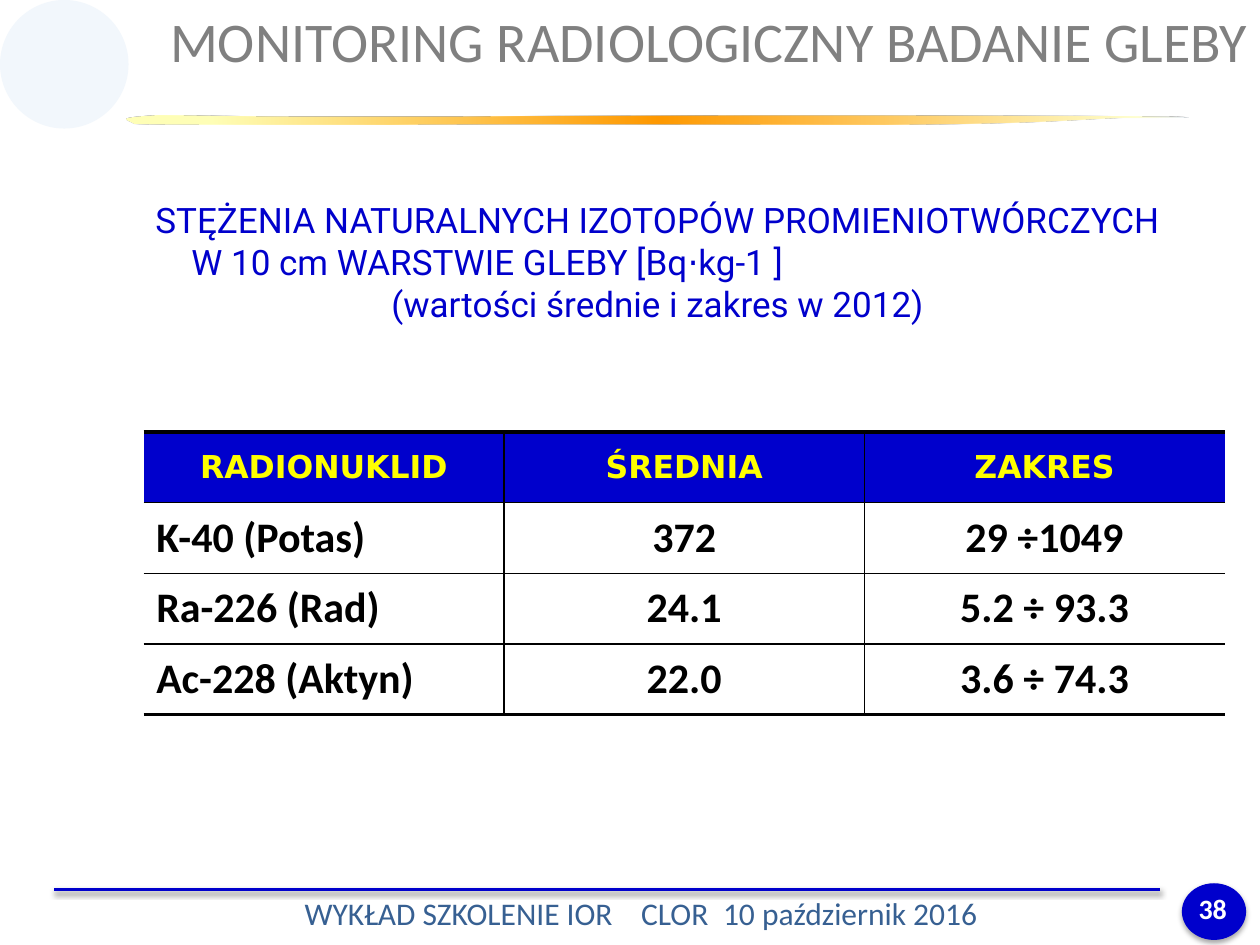
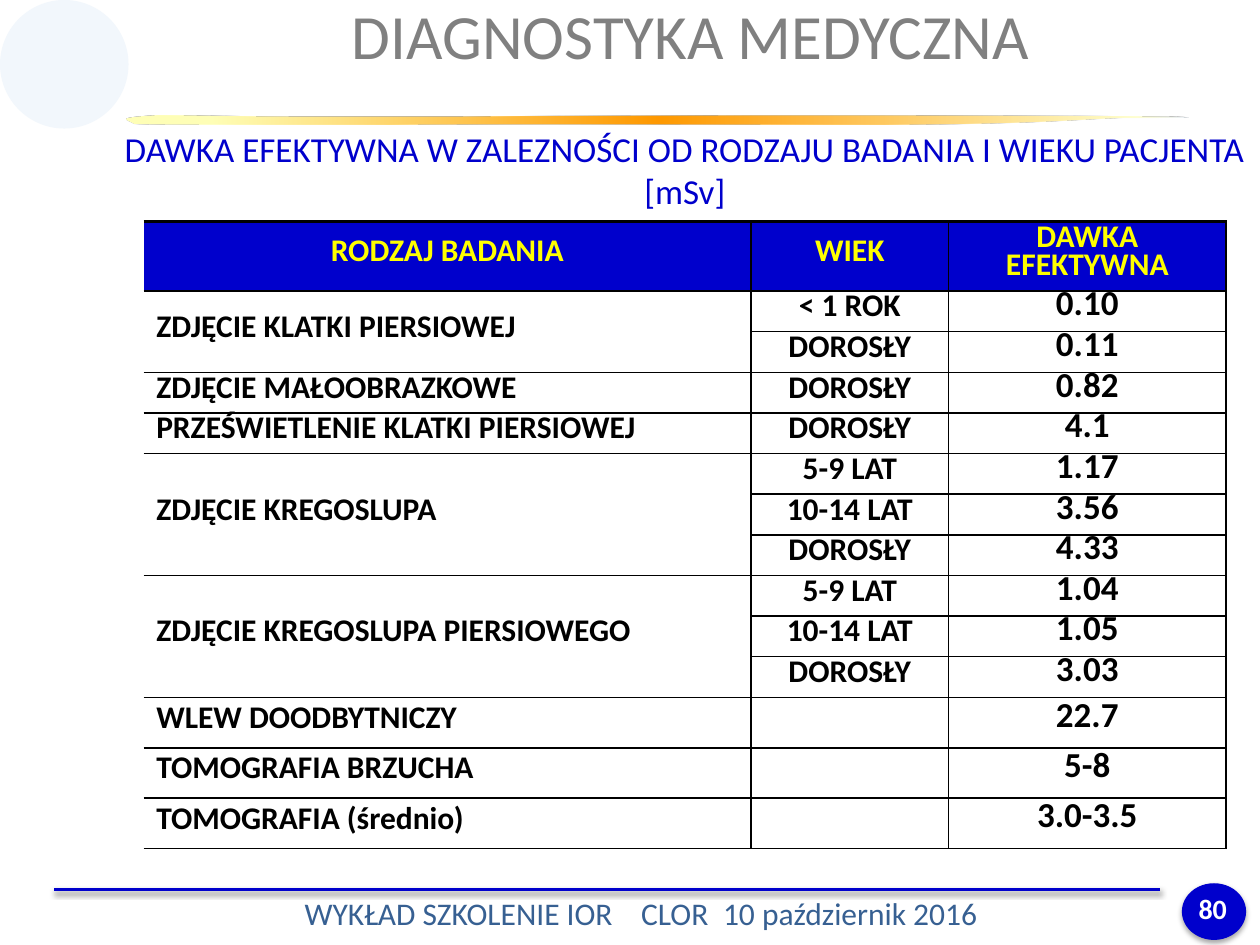
from pptx import Presentation
from pptx.dml.color import RGBColor
from pptx.enum.shapes import MSO_CONNECTOR, MSO_SHAPE
from pptx.enum.text import MSO_ANCHOR, PP_ALIGN
from pptx.oxml import parse_xml
from pptx.oxml.ns import nsdecls, qn
from pptx.util import Inches, Pt

OVAL, ROUNDED = MSO_SHAPE.OVAL, MSO_SHAPE.ROUNDED_RECTANGLE
STRAIGHT = MSO_CONNECTOR.STRAIGHT
LEFT, CENTER = PP_ALIGN.LEFT, PP_ALIGN.CENTER
MIDDLE, TOP = MSO_ANCHOR.MIDDLE, MSO_ANCHOR.TOP

BLUE, YELLOW, BLACK, WHITE = "0000CC", "FFFF00", "000000", "FFFFFF"
TITLE_GRAY, FOOTER_BLUE, DISC_BLUE = "808080", "376092", "F2F7FC"
BODY_FONT = "Calibri"
PLAIN_TABLE = "{2D5ABB26-0587-4C30-8999-92F81FD0307C}"
THIN, THICK = 1, 2.25

# Each stop: position in percent, colour, opacity in percent
SWOOSH_STOPS = [(8, "FFFFB7", 100), (50, "FF9900", 100),
                (95, "FFFFC9", 97), (100, "E1E8F5", 100)]

# Bezier segments: two control points and an end point
SWOOSH_START = (8.91, 0.94)
SWOOSH_CURVES = [
    ((9.29, 0.94), (9.63, 0.94), (9.3, 0.93)),
    ((7.97, 0.92), (5, 0.92), (3.65, 0.93)),
    ((3.2, 0.93), (2.8, 0.93), (2.33, 0.93)),
    ((1.95, 0.93), (1.44, 0.92), (1.25, 0.92)),
    ((0.89, 0.94), (1.01, 0.95), (1.06, 0.98)),
    ((0.99, 0.99), (2.09, 0.99), (3.09, 0.99)),
    ((4.08, 0.98), (6.22, 0.99), (7.02, 0.99)),
    ((8.35, 0.98), (8.54, 0.95), (8.91, 0.94)),
]

SOIL_ROWS = [
    ("RADIONUKLID", "ŚREDNIA", "ZAKRES"),
    ("K-40 (Potas)", "372", "29 ÷1049"),
    ("Ra-226 (Rad)", "24.1", "5.2 ÷ 93.3"),
    ("Ac-228 (Aktyn)", "22.0", "3.6 ÷ 74.3"),
]
# None continues the cell above
DOSE_ROWS = [
    ("RODZAJ BADANIA", "WIEK", "DAWKA EFEKTYWNA"),
    ("ZDJĘCIE KLATKI PIERSIOWEJ", "< 1 ROK", "0.10"),
    (None, "DOROSŁY", "0.11"),
    ("ZDJĘCIE MAŁOOBRAZKOWE", "DOROSŁY", "0.82"),
    ("PRZEŚWIETLENIE KLATKI PIERSIOWEJ", "DOROSŁY", "4.1"),
    ("ZDJĘCIE KREGOSLUPA", "5-9 LAT", "1.17"),
    (None, "10-14 LAT", "3.56"),
    (None, "DOROSŁY", "4.33"),
    ("ZDJĘCIE KREGOSLUPA PIERSIOWEGO", "5-9 LAT", "1.04"),
    (None, "10-14 LAT", "1.05"),
    (None, "DOROSŁY", "3.03"),
    ("WLEW DOODBYTNICZY", "", "22.7"),
    ("TOMOGRAFIA BRZUCHA", "", "5-8"),
    ("TOMOGRAFIA (średnio)", "", "3.0-3.5"),
]


def rgb(color):
    return RGBColor.from_string(color)


def inches(values):
    return [Inches(value) for value in values]


def drawing_xml(tag, attributes, inner=""):
    return parse_xml(f"<a:{tag} {nsdecls('a')} {attributes}>{inner}</a:{tag}>")


def color_xml(color, opacity=100):
    return (f'<a:srgbClr val="{color}"><a:alpha val="{opacity * 1000}"/>'
            "</a:srgbClr>")


def write(frame, lines, size=18, font=BODY_FONT, color=BLACK, bold=False,
          align=LEFT, exact=None):
    """Fill a text frame, one paragraph a line; exact is line pitch in points."""
    for index, line in enumerate(lines):
        para = frame.paragraphs[0] if index == 0 else frame.add_paragraph()
        para.alignment = align
        if exact:
            para.line_spacing = Pt(exact)
        span = para.add_run()
        span.text = line
        span.font.size, span.font.name = Pt(size), font
        span.font.bold = bold
        span.font.color.rgb = rgb(color)


def add_text(page, box, lines, rounded=False, **style):
    if rounded:
        shape = add_plain_shape(page, ROUNDED, box)
    else:
        shape = page.shapes.add_textbox(*inches(box))
    frame = shape.text_frame
    frame.word_wrap = True
    frame.vertical_anchor = TOP
    write(frame, lines, **style)
    return frame


def add_plain_shape(page, kind, box, fill=None):
    shape = page.shapes.add_shape(kind, *inches(box))
    shape.shadow.inherit = False
    shape.line.fill.background()
    if fill:
        shape.fill.solid()
        shape.fill.fore_color.rgb = rgb(fill)
    else:
        shape.fill.background()
    return shape


def add_shadow(shape, opacity, distance):
    properties = shape.element.spPr
    effects = properties.find(qn("a:effectLst"))
    if effects is None:
        effects = drawing_xml("effectLst", "")
        properties.append(effects)
    effects.append(drawing_xml(
        "outerShdw", f'blurRad="{Pt(3.1)}" dist="{Pt(distance)}" '
        'dir="5400000" rotWithShape="0"', color_xml(BLACK, opacity)))


def curve_points(start, curves, steps=12):
    points = []
    for first, second, end in curves:
        for step in range(1, steps + 1):
            t = step / steps
            points.append(tuple(
                Inches((1 - t) ** 3 * a + 3 * (1 - t) ** 2 * t * b
                       + 3 * (1 - t) * t ** 2 * c + t ** 3 * d)
                for a, b, c, d in zip(start, first, second, end)))
        start = end
    return points


def add_swoosh(page):
    builder = page.shapes.build_freeform(*inches(SWOOSH_START))
    builder.add_line_segments(curve_points(SWOOSH_START, SWOOSH_CURVES))
    swoosh = builder.convert_to_shape()
    swoosh.shadow.inherit = False
    swoosh.line.fill.background()
    swoosh.fill.background()
    stops = "".join(f'<a:gs pos="{place * 1000}">{color_xml(color, opacity)}'
                    "</a:gs>" for place, color, opacity in SWOOSH_STOPS)
    properties = swoosh.element.spPr
    properties.replace(
        properties.find(qn("a:noFill")),
        drawing_xml("gradFill", 'rotWithShape="1"',
                    f'<a:gsLst>{stops}</a:gsLst><a:lin ang="0"/>'))


def add_footer(page, top, number):
    badge = add_plain_shape(page, OVAL, (9.38, top, 0.51, 0.45), BLUE)
    add_shadow(badge, 35, 1.8)

    rule = page.shapes.add_connector(
        STRAIGHT, *inches((0.43, top + 0.05, 9.21, top + 0.05)))
    rule.line.color.rgb = rgb(BLUE)
    rule.line.width = Pt(1.5)
    add_shadow(rule, 38, 1.6)

    frame = add_text(page, (2.32, top + 0.04, 5.67, 0.4),
                     ["WYKŁAD SZKOLENIE IOR\tCLOR\t10 październik 2016"],
                     color=FOOTER_BLUE)
    stops = "".join(f'<a:tab pos="{Inches(place)}" algn="l"/>'
                    for place in (2.67, 3.32))
    frame.paragraphs[0]._p.get_or_add_pPr().append(
        drawing_xml("tabLst", "", stops))
    add_text(page, (9.33, top + 0.02, 0.59, 0.4), [str(number)],
             size=16, color=WHITE, bold=True, align=CENTER)


def add_page(deck, number):
    page = deck.slides.add_slide(deck.slide_layouts[6])
    add_swoosh(page)
    add_plain_shape(page, OVAL, (0, 0, 1.02, 1.02), DISC_BLUE)
    add_footer(page, 7.01, number)
    return page


def add_title(page, box, title, size, **style):
    add_text(page, box, [title], size=size, color=TITLE_GRAY, align=CENTER,
             **style)


def set_borders(cell, widths):
    """Set left, right, top and bottom borders; a width of 0 hides one."""
    properties = cell._tc.get_or_add_tcPr()
    for index, (side, width) in enumerate(zip("LRTB", widths)):
        paint = (f"<a:solidFill>{color_xml(BLACK)}</a:solidFill>" if width
                 else "<a:noFill/>")
        properties.insert(index, drawing_xml(
            f"ln{side}", f'w="{Pt(width)}"', paint))


def merge_continued(table, rows):
    for column in range(len(rows[0])):
        start = 0
        for index in range(1, len(rows) + 1):
            if index < len(rows) and rows[index][column] is None:
                continue
            if index - start > 1:
                table.cell(start, column).merge(table.cell(index - 1, column))
            start = index


def add_grid(page, left, top, widths, heights, rows, header_font=BODY_FONT,
             sizes=(18, 18, 18), exact=None, right_edge=0, bottom_edge=THIN):
    box = inches((left, top, sum(widths), sum(heights)))
    holder = page.shapes.add_table(len(rows), len(widths), *box)
    table = holder.table
    table.horz_banding = False
    next(holder.element.iter(qn("a:tableStyleId"))).text = PLAIN_TABLE
    for column, width in zip(table.columns, widths):
        column.width = Inches(width)
    for row, height in zip(table.rows, heights):
        row.height = Inches(height)

    last_row, last_column = len(rows) - 1, len(widths) - 1
    for r, row in enumerate(rows):
        for c, value in enumerate(row):
            cell = table.cell(r, c)
            cell.vertical_anchor = MIDDLE
            if r == 0:
                cell.fill.solid()
                cell.fill.fore_color.rgb = rgb(BLUE)
            else:
                cell.fill.background()
            set_borders(cell, (THIN if c else 0,
                               THIN if c < last_column else right_edge,
                               THIN if r else THICK,
                               THIN if r < last_row else bottom_edge))
            if value:
                write(cell.text_frame, [value], bold=True, exact=exact,
                      size=sizes[c] if r else 18,
                      font=BODY_FONT if r else header_font,
                      color=BLACK if r else YELLOW,
                      align=LEFT if r and c == 0 else CENTER)
    merge_continued(table, rows)


def build_soil_page(deck):
    page = add_page(deck, 38)
    frame = add_text(page, (0.83, 1.47, 8.78, 1.23),
                     ["STĘŻENIA NATURALNYCH IZOTOPÓW PROMIENIOTWÓRCZYCH",
                      "W 10 cm WARSTWIE GLEBY [Bq⋅kg-1 ]",
                      "(wartości średnie i zakres w 2012)"],
                     rounded=True, size=20, font="Roboto", color=BLUE,
                     align=CENTER)
    unit_line = frame.paragraphs[1]
    unit_line.alignment = LEFT
    unit_line._p.get_or_add_pPr().set("marL", str(Inches(0.53)))
    add_grid(page, 1.14, 3.43, [2.86] * 3, [0.56] * 4, SOIL_ROWS,
             header_font="DejaVu Sans", sizes=(24, 24, 24), bottom_edge=THICK)
    add_title(page, (0.98, 0, 9.3, 0.64),
              "MONITORING RADIOLOGICZNY BADANIE GLEBY", 32)


def build_dose_page(deck):
    page = add_page(deck, 80)
    add_grid(page, 1.14, 1.76, [4.82, 1.57, 2.2],
             [0.55] + [0.32] * 10 + [0.4] * 3, DOSE_ROWS,
             sizes=(18, 18, 20), exact=16, right_edge=THIN)
    add_text(page, (0.59, 0.92, 9.69, 0.86),
             ["DAWKA EFEKTYWNA W ZALEZNOŚCI OD RODZAJU BADANIA I WIEKU "
              "PACJENTA [mSv]"],
             rounded=True, size=20, color=BLUE, align=CENTER)
    add_title(page, (0.67, 0.19, 9.62, 0.49), "DIAGNOSTYKA MEDYCZNA", 36,
              exact=24)


def main():
    deck = Presentation()
    deck.slide_width, deck.slide_height = Inches(10), Inches(7.5)
    build_soil_page(deck)
    build_dose_page(deck)
    deck.save("out.pptx")


if __name__ == "__main__":
    main()
